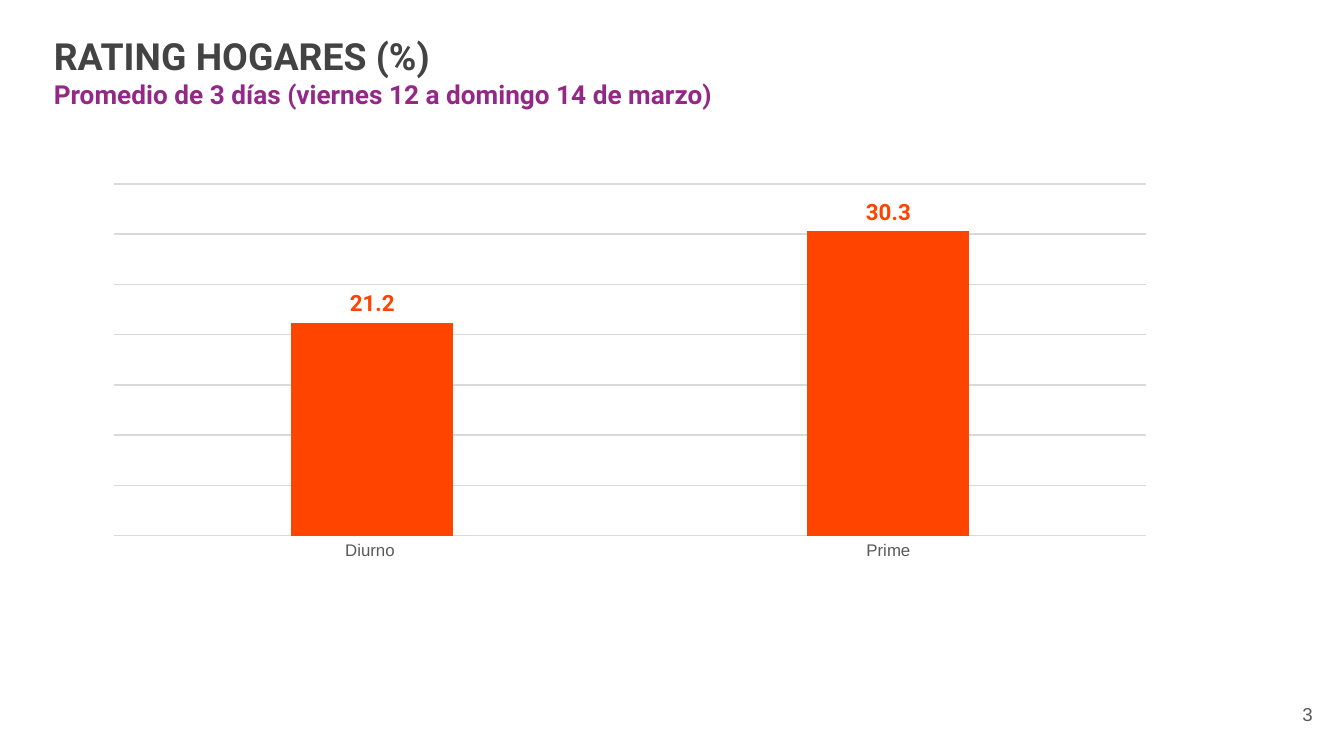
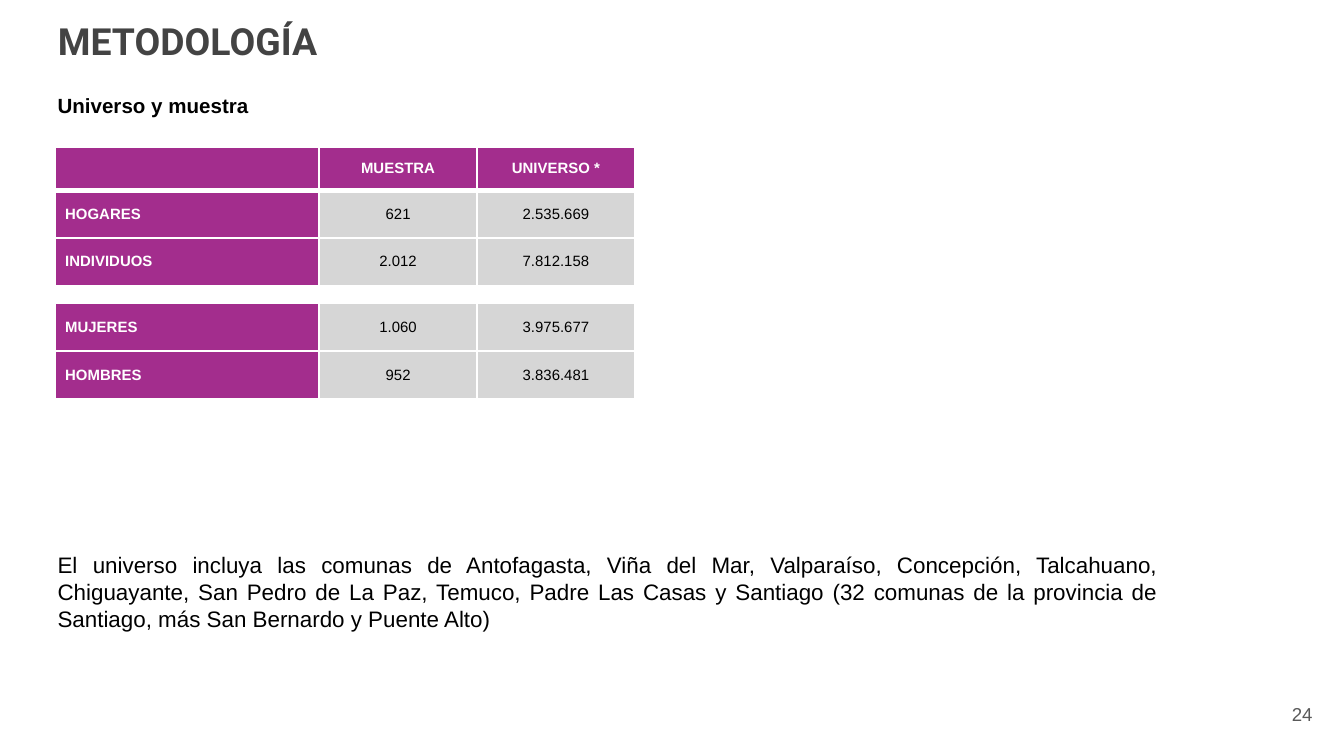
from lxml.etree import SubElement
from pptx import Presentation
from pptx.chart.data import CategoryChartData
from pptx.dml.color import RGBColor
from pptx.enum.chart import XL_CHART_TYPE as ChartType
from pptx.enum.chart import XL_LABEL_POSITION as LabelPosition
from pptx.enum.chart import XL_TICK_LABEL_POSITION as TickLabels
from pptx.enum.chart import XL_TICK_MARK as TickMark
from pptx.enum.text import MSO_ANCHOR as Anchor
from pptx.enum.text import MSO_AUTO_SIZE as AutoSize
from pptx.enum.text import PP_ALIGN as Align
from pptx.oxml.ns import qn
from pptx.util import Emu, Pt

SCALE = 4572  # EMU in one px, 200 px to the inch
TITLE_ONLY = 5

PURPLE, PLUM = "A32D8D", "942887"
ORANGE = "FF4400"
DARK, GREY = "434343", "595959"
RULE, CELL_GREY = "D9D9D9", "D6D6D6"
BLACK, WHITE = "000000", "FFFFFF"

TITLE = {"name": "Roboto", "size": 20, "bold": True, "color": DARK}
SUBTITLE = TITLE | {"size": 14, "color": PLUM}
PAGE_NUMBER = {"name": "Arial", "size": 10, "bold": False, "color": GREY}
BODY = PAGE_NUMBER | {"size": 12, "color": BLACK}
HEADING = BODY | {"size": 11, "bold": True}
CELL = BODY | {"size": 8}
CELL_HEAD = CELL | {"bold": True, "color": WHITE}
CHART_TEXT = BODY | {"size": 10}
AXIS_TEXT = PAGE_NUMBER | {"size": 9}
VALUE_LABEL = TITLE | {"size": 12, "color": ORANGE}

SAMPLE_ROWS = [
    ("", "MUESTRA", "UNIVERSO *"),
    ("HOGARES", "621", "2.535.669"),
    ("INDIVIDUOS", "2.012", "7.812.158"),
    None,
    ("MUJERES", "1.060", "3.975.677"),
    ("HOMBRES", "952", "3.836.481"),
    None,
]
UNIVERSE_NOTE = (
    "El universo incluya las comunas de Antofagasta, Viña del Mar, Valparaíso, "
    "Concepción, Talcahuano, Chiguayante, San Pedro de La Paz, Temuco, Padre Las "
    "Casas y Santiago (32 comunas de la provincia de Santiago, más San Bernardo "
    "y Puente Alto)"
)


def px(length):
    return Emu(length * SCALE)


def rgb(value):
    return RGBColor.from_string(value)


def style_font(font, style):
    for key, value in style.items():
        if key == "color":
            font.color.rgb = rgb(value)
        else:
            setattr(font, key, Pt(value) if key == "size" else value)


def add_span(para, text, style):
    span = para.add_run()
    span.text = text
    style_font(span.font, style)


def set_margins(target, across, down):
    """Set the insets of a text frame or of a table cell."""
    margins = {"left": across, "right": across, "top": down, "bottom": down}
    for side, value in margins.items():
        setattr(target, f"margin_{side}", px(value))


def add_page(deck, number, title_place, *title_lines):
    page = deck.slides.add_slide(deck.slide_layouts[TITLE_ONLY])
    title = page.shapes.title
    for name, value in zip(("left", "top", "width", "height"), title_place):
        setattr(title, name, px(value))
    frame = title.text_frame
    frame.word_wrap = True
    frame.auto_size = AutoSize.NONE
    frame.vertical_anchor = Anchor.TOP
    set_margins(frame, 20, 20)
    para = frame.paragraphs[0]
    para.alignment = Align.LEFT
    for index, (text, style) in enumerate(title_lines):
        if index:
            para.add_line_break()
        add_span(para, text, style)

    footer = add_text(page, (1853, 1020, 120, 86), str(number), PAGE_NUMBER, Align.RIGHT)
    footer.text_frame.vertical_anchor = Anchor.MIDDLE
    set_margins(footer.text_frame, 20, 20)
    return page


def add_text(page, place, text, style, align=Align.LEFT, wrap=True, grow=False):
    box = page.shapes.add_textbox(*map(px, place))
    frame = box.text_frame
    frame.word_wrap = wrap
    frame.auto_size = AutoSize.SHAPE_TO_FIT_TEXT if grow else AutoSize.NONE
    para = frame.paragraphs[0]
    para.alignment = align
    add_span(para, text, style)
    return box


def style_line(line):
    line.color.rgb = rgb(RULE)
    line.width = Pt(0.75)


def add_rating_chart(page, place, ratings):
    data = CategoryChartData(number_format="0.0")
    data.categories = list(ratings)
    data.add_series("Series 1", list(ratings.values()))
    frame = page.shapes.add_chart(ChartType.COLUMN_CLUSTERED, *map(px, place), data)
    chart = frame.chart
    chart.has_title = chart.has_legend = False
    style_font(chart.font, CHART_TEXT)

    category_axis, value_axis = chart.category_axis, chart.value_axis
    for axis in (category_axis, value_axis):
        axis.major_tick_mark = axis.minor_tick_mark = TickMark.NONE
        axis.tick_label_position = TickLabels.NEXT_TO_AXIS
    style_font(category_axis.tick_labels.font, AXIS_TEXT)
    style_line(category_axis.format.line)

    scale = {"visible": False, "minimum_scale": 0, "maximum_scale": 35, "major_unit": 5}
    for name, value in scale.items():
        setattr(value_axis, name, value)
    style_line(value_axis.major_gridlines.format.line)

    plot = chart.plots[0]
    plot.gap_width, plot.overlap = 219, -27
    plot.vary_by_categories = False
    series = plot.series[0]
    series.format.fill.solid()
    series.format.fill.fore_color.rgb = rgb(ORANGE)
    labels = series.data_labels
    labels.show_value = True
    labels.position = LabelPosition.OUTSIDE_END
    style_font(labels.font, VALUE_LABEL)


def add_borders(cell, widths):
    """Draw white borders; widths gives points by side, L R T B in that order."""
    properties = cell._tc.get_or_add_tcPr()
    for side, width in widths.items():
        line = SubElement(properties, qn(f"a:ln{side}"), w=str(Pt(width)))
        fill = SubElement(line, qn("a:solidFill"))
        SubElement(fill, qn("a:srgbClr"), val=WHITE)


def fill_cell(cell, text, row, column):
    set_margins(cell, 15, 0)
    cell.vertical_anchor = Anchor.MIDDLE
    add_borders(cell, {"L": 1, "R": 1, "T": 3 if row == 1 else 1, "B": 1 if row else 3})
    is_head = row == 0 or column == 0
    para = cell.text_frame.paragraphs[0]
    if text is None:
        cell.fill.background()
    else:
        cell.fill.solid()
        cell.fill.fore_color.rgb = rgb(PURPLE if is_head else CELL_GREY)
    if text:
        para.alignment = Align.CENTER if column else Align.LEFT
        add_span(para, text, CELL_HEAD if is_head else CELL)
    else:
        SubElement(para._p, qn("a:endParaRPr"), sz=str(CELL["size"] * 100))


def add_sample_table(page, left, top, widths, rows):
    heights = [16 if row is None else 71 for row in rows]
    heights[0] = 64
    place = (left, top, sum(widths), sum(heights))
    table = page.shapes.add_table(len(rows), len(widths), *map(px, place)).table
    table.first_row = table.horz_banding = False
    for column, width in zip(table.columns, widths):
        column.width = px(width)
    for row_index, (row, height) in enumerate(zip(rows, heights)):
        table.rows[row_index].height = px(height)
        for column_index, text in enumerate(row or [None] * len(widths)):
            cell = table.cell(row_index, column_index)
            fill_cell(cell, text, row_index, column_index)


def main():
    deck = Presentation()
    deck.slide_width, deck.slide_height = px(2000), px(1125)

    page = add_page(
        deck, 3, (60, 30, 1678, 158),
        ("RATING HOGARES (%) ", TITLE),
        ("Promedio de 3 días (viernes 12 a domingo 14 de marzo)", SUBTITLE),
    )
    add_rating_chart(page, (138, 262, 1600, 584), {"Diurno ": 21.2, "Prime": 30.3})

    page = add_page(deck, 24, (66, 7, 1762, 126), ("METODOLOGÍA", TITLE))
    add_text(page, (66, 128, 326, 58), "Universo y muestra", HEADING, wrap=False, grow=True)
    add_sample_table(page, 82, 219, (393, 235, 235), SAMPLE_ROWS)
    add_text(page, (66, 811, 1678, 142), UNIVERSE_NOTE, BODY, Align.JUSTIFY, grow=True)

    deck.save("out.pptx")


if __name__ == "__main__":
    main()
